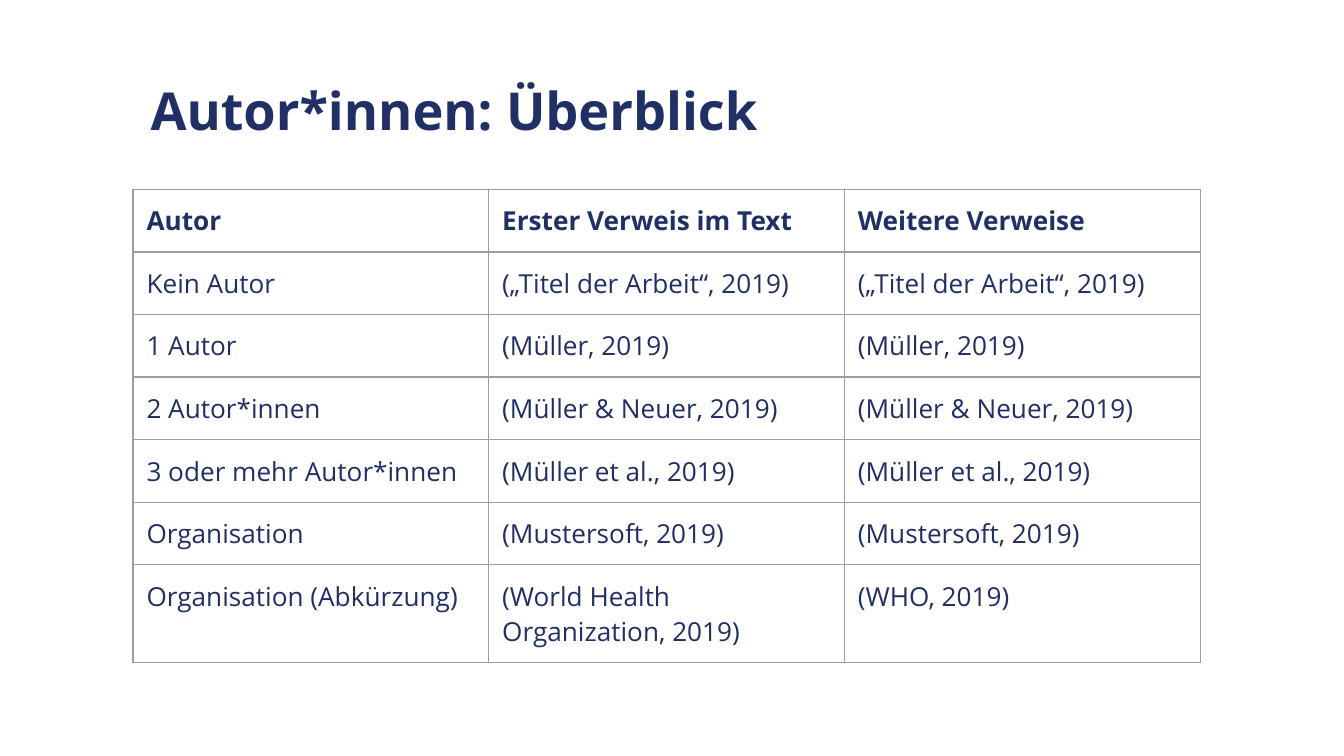
"""Build a slide with an overview of in-text citations by author type."""
import pptx
import pptx.dml.color
import pptx.enum.text
import pptx.oxml
import pptx.oxml.ns
import pptx.util

Inches = pptx.util.Inches
NAVY = pptx.dml.color.RGBColor(0x20, 0x2F, 0x66)
GREY = pptx.dml.color.RGBColor(0x9E, 0x9E, 0x9E)
WHITE = pptx.dml.color.RGBColor(0xFF, 0xFF, 0xFF)

INSETS = {
    "margin_left": Inches(0.1),
    "margin_right": Inches(0.1),
    "margin_top": Inches(0.1),
    "margin_bottom": Inches(0.1),
}
TITLE_FORMAT = {"name": "Open Sans", "size": pptx.util.Pt(28), "bold": True}
HEADER_FORMAT = {"name": "Open Sans", "size": pptx.util.Pt(14), "bold": True}
BODY_FORMAT = {**HEADER_FORMAT, "bold": False}

CITATIONS = [
    ("Autor", "Erster Verweis im Text", "Weitere Verweise"),
    ("Kein Autor", "(„Titel der Arbeit“, 2019)", "(„Titel der Arbeit“, 2019)"),
    ("1 Autor", "(Müller, 2019)", "(Müller, 2019)"),
    ("2 Autor*innen", "(Müller & Neuer, 2019)", "(Müller & Neuer, 2019)"),
    ("3 oder mehr Autor*innen", "(Müller et al., 2019)", "(Müller et al., 2019)"),
    ("Organisation", "(Mustersoft, 2019)", "(Mustersoft, 2019)"),
    ("Organisation (Abkürzung)", "(World Health Organization, 2019)", "(WHO, 2019)"),
]


def apply_format(target, values):
    """Set each attribute named in a dict of format values."""
    for name, value in values.items():
        setattr(target, name, value)


def write_text(para, text, font_format):
    """Write one left-aligned span of navy text into a paragraph."""
    para.alignment = pptx.enum.text.PP_ALIGN.LEFT
    span = para.add_run()
    span.text = text
    apply_format(span.font, font_format)
    span.font.color.rgb = NAVY


def add_title(page, text):
    """Place and fill the title placeholder."""
    title = page.shapes.title
    position = {
        "left": Inches(1.02),
        "top": Inches(0.5),
        "width": Inches(7.87),
        "height": Inches(0.63),
    }
    apply_format(title, position)
    frame_format = {
        **INSETS,
        "word_wrap": True,
        "auto_size": pptx.enum.text.MSO_AUTO_SIZE.NONE,
        "vertical_anchor": pptx.enum.text.MSO_ANCHOR.MIDDLE,
    }
    apply_format(title.text_frame, frame_format)
    write_text(title.text_frame.paragraphs[0], text, TITLE_FORMAT)


def add_borders(cell):
    """Draw a thin grey line on every side of a cell."""
    properties = cell._tc.get_or_add_tcPr()
    for index, side in enumerate(("lnL", "lnR", "lnT", "lnB")):
        line = pptx.oxml.parse_xml(
            f'<a:{side} {pptx.oxml.ns.nsdecls("a")} w="{pptx.util.Pt(0.75)}">'
            f'<a:solidFill><a:srgbClr val="{GREY}"/></a:solidFill></a:{side}>'
        )
        properties.insert(index, line)


def fill_cell(cell, text, font_format):
    """Give a cell its text, margins, fill and borders."""
    apply_format(cell, INSETS)
    cell.vertical_anchor = pptx.enum.text.MSO_ANCHOR.TOP
    cell.fill.solid()
    cell.fill.fore_color.rgb = WHITE
    write_text(cell.text_frame.paragraphs[0], text, font_format)
    add_borders(cell)


def add_citation_table(page, rows):
    """Add the table, with its first row as the header."""
    table = page.shapes.add_table(
        len(rows), len(rows[0]), Inches(0.99), Inches(1.41),
        Inches(7.94), Inches(0.43) * len(rows),
    ).table
    table.horz_banding = False
    table.rows[0].height = Inches(0.44)
    for row_index, texts in enumerate(rows):
        font_format = BODY_FORMAT if row_index else HEADER_FORMAT
        for column_index, text in enumerate(texts):
            fill_cell(table.cell(row_index, column_index), text, font_format)


def main():
    """Build and save the deck."""
    deck = pptx.Presentation()
    deck.slide_width = Inches(10)
    deck.slide_height = deck.slide_width * 9 // 16
    page = deck.slides.add_slide(deck.slide_layouts[5])
    add_title(page, "Autor*innen: Überblick")
    add_citation_table(page, CITATIONS)
    deck.save("out.pptx")


if __name__ == "__main__":
    main()
